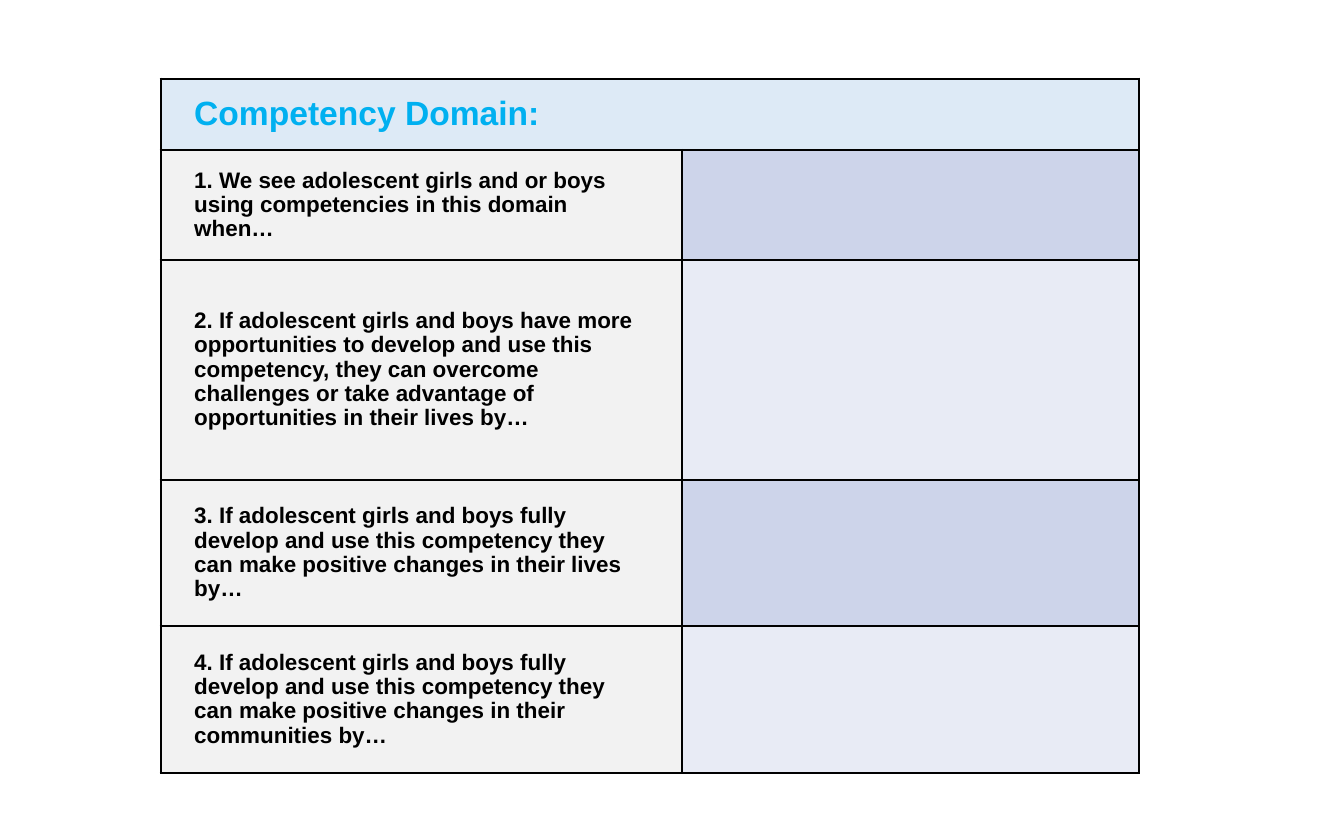
from lxml import etree
from pptx import Presentation
from pptx.dml.color import RGBColor
from pptx.enum import text as t
from pptx.oxml import ns
from pptx.util import Inches, Pt

COLORS = {
    "heading_fill": "DDEAF6", "heading": "00B0F0", "prompt_fill": "F2F2F2",
    "answer_dark": "CDD4EA", "answer_light": "E8EBF5", "ink": "000000",
}
HEADING = "Competency Domain:"
PROMPTS = [
    "1. We see adolescent girls and or boys using competencies in this domain when…",
    "2. If adolescent girls and boys have more opportunities to develop and use this "
    "competency, they can overcome challenges or take advantage of opportunities in "
    "their lives by…",
    "3. If adolescent girls and boys fully develop and use this competency they can "
    "make positive changes in their lives by…",
    "4. If adolescent girls and boys fully develop and use this competency they can "
    "make positive changes in their communities by…",
]
COLUMN_WIDTHS = [7.76, 6.8]
ROW_HEIGHTS = [1.06, 1.64, 3.27, 2.18, 2.18]


def write(cell, words, size=24, color="ink", font="Arial", bold=True):
    cell.vertical_anchor = t.MSO_ANCHOR.MIDDLE
    cell.margin_left = cell.margin_right = Inches(0.5)
    cell.margin_top = cell.margin_bottom = Inches(0.25)
    paragraph = cell.text_frame.paragraphs[0]
    paragraph.line_spacing = 0.97
    run = paragraph.add_run()
    run.text = words
    run.font.size = Pt(size)
    run.font.name = font
    run.font.bold = bold
    run.font.color.rgb = RGBColor.from_string(COLORS[color])


def paint(cell, fill, border="ink", width=2.25):
    """Fill a cell and rule its four sides."""
    cell.fill.solid()
    cell.fill.fore_color.rgb = RGBColor.from_string(COLORS[fill])
    properties = cell._tc.get_or_add_tcPr()
    # Borders come before the fill in the cell properties
    for position, side in enumerate(("lnL", "lnR", "lnT", "lnB")):
        line = etree.Element(ns.qn(f"a:{side}"), w=str(Pt(width)))
        solid = etree.SubElement(line, ns.qn("a:solidFill"))
        etree.SubElement(solid, ns.qn("a:srgbClr"), val=COLORS[border])
        properties.insert(position, line)


def add_worksheet(slide, left, top, column_widths, row_heights):
    worksheet = slide.shapes.add_table(
        len(row_heights), len(column_widths), Inches(left), Inches(top),
        Inches(sum(column_widths)), Inches(sum(row_heights))).table
    for column, width in zip(worksheet.columns, column_widths):
        column.width = Inches(width)
    for row, height in zip(worksheet.rows, row_heights):
        row.height = Inches(height)

    # Heading across both columns
    heading = worksheet.cell(0, 0)
    heading.merge(worksheet.cell(0, 1))
    for column in range(2):
        paint(worksheet.cell(0, column), "heading_fill")
    write(heading, HEADING, size=36, color="heading")

    # Prompts with banded answer spaces
    for row, words in enumerate(PROMPTS, start=1):
        prompt, answer = worksheet.cell(row, 0), worksheet.cell(row, 1)
        paint(prompt, "prompt_fill")
        write(prompt, words)
        paint(answer, "answer_dark" if row % 2 else "answer_light")


def main():
    deck = Presentation()
    deck.slide_width, deck.slide_height = Inches(20), Inches(12.5)
    slide = deck.slides.add_slide(deck.slide_layouts.get_by_name("Blank"))
    add_worksheet(slide, 2.39, 1.17, COLUMN_WIDTHS, ROW_HEIGHTS)
    deck.save("out.pptx")


if __name__ == "__main__":
    main()
